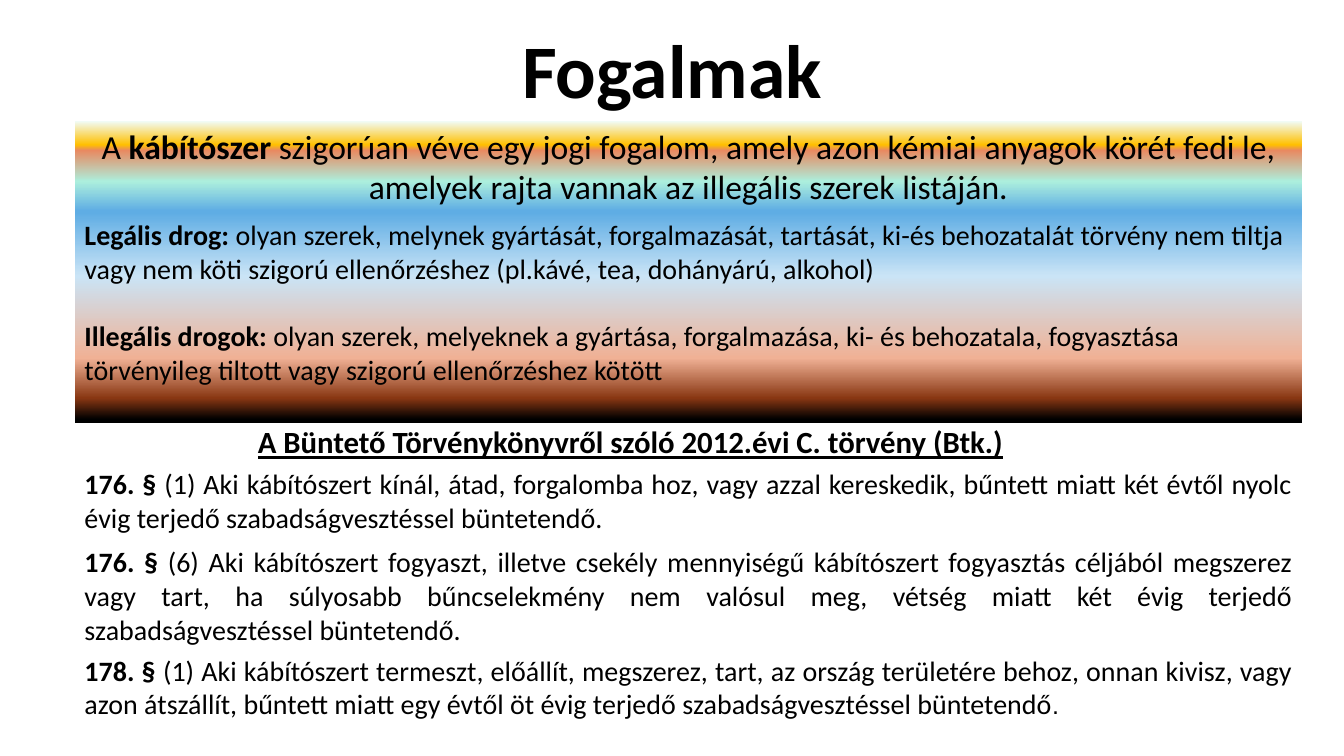
import pptx
import pptx.dml.color
import pptx.enum.shapes
import pptx.enum.text
import pptx.oxml.ns
import pptx.util
from lxml import etree

Cm = pptx.util.Cm
Pt = pptx.util.Pt
RGBColor = pptx.dml.color.RGBColor
Align = pptx.enum.text.PP_ALIGN
Anchor = pptx.enum.text.MSO_ANCHOR
qn = pptx.oxml.ns.qn

BLACK = RGBColor(0, 0, 0)
MINT_WHITE = RGBColor(0xF1, 0xFC, 0xF9)
GOLD = RGBColor(0xFF, 0xC0, 0x00)
CORAL = RGBColor(0xE9, 0x89, 0x60)
MINT = RGBColor(0xAC, 0xEF, 0xDD)
BLUE = RGBColor(0x5F, 0xAD, 0xE4)
PALE_BLUE = RGBColor(0xCA, 0xE4, 0xF6)
PEACH = RGBColor(0xF0, 0xB1, 0x95)
BROWN = RGBColor(0x89, 0x37, 0x13)

LEFT, WIDTH = Cm(1.88), Cm(30.94)

DEFINITION = [
    ("A ", False),
    ("kábítószer ", True),
    ("szigorúan véve egy jogi fogalom, amely azon kémiai anyagok körét fedi le, "
     "amelyek rajta vannak az illegális szerek listáján.", False),
]
DRUG_KINDS = [
    [("Legális drog: ", True),
     ("olyan szerek, melynek gyártását, forgalmazását, tartását, ki-és behozatalát törvény "
      "nem tiltja vagy nem köti szigorú ellenőrzéshez (pl.kávé, tea, dohányárú, alkohol)", False)],
    [("Illegális drogok: ", True),
     ("olyan szerek, melyeknek a gyártása, forgalmazása, ki- és behozatala, fogyasztása "
      "törvényileg tiltott vagy szigorú ellenőrzéshez kötött", False)],
]
SECTIONS = [
    (Cm(11.63), Cm(1.96), "176. §",
     " (1) Aki kábítószert kínál, átad, forgalomba hoz, vagy azzal kereskedik, bűntett miatt "
     "két évtől nyolc évig terjedő szabadságvesztéssel büntetendő."),
    (Cm(13.59), Cm(2.82), "176. § ",
     "(6) Aki kábítószert fogyaszt, illetve csekély mennyiségű kábítószert fogyasztás céljából "
     "megszerez vagy tart, ha súlyosabb bűncselekmény nem valósul meg, vétség miatt két évig "
     "terjedő szabadságvesztéssel büntetendő."),
    (Cm(16.33), Cm(1.96), "178. §",
     " (1) Aki kábítószert termeszt, előállít, megszerez, tart, az ország területére behoz, "
     "onnan kivisz, vagy azon átszállít, bűntett miatt egy évtől öt évig terjedő "
     "szabadságvesztéssel büntetendő"),
]


class ConceptSlide:
    font = "Calibri"

    def __init__(self, slide):
        self.slide = slide

    def style(self, run, size, bold):
        run.font.name = self.font
        run.font.size = Pt(size)
        run.font.bold = bold
        run.font.color.rgb = BLACK

    def fill_text(self, frame, paragraphs, size, align, gap=0):
        frame.word_wrap = True
        for index, pieces in enumerate(paragraphs):
            paragraph = frame.add_paragraph() if index else frame.paragraphs[0]
            paragraph.alignment = align
            paragraph.space_before = Pt(gap if index else 0)
            for words, bold in pieces:
                run = paragraph.add_run()
                run.text = words
                self.style(run, size, bold)

    def title(self, words):
        heading = self.slide.shapes.title
        heading.left, heading.top = Cm(2.33), Cm(0)
        heading.width, heading.height = Cm(29.21), Cm(3.73)
        heading.text_frame.vertical_anchor = Anchor.MIDDLE
        self.fill_text(heading.text_frame, [[(words, True)]], 54, Align.CENTER)
        heading.text_frame.paragraphs[0].line_spacing = 0.9

    def band(self, top, height, stops, paragraphs, size, align, gap=0):
        band = self.slide.shapes.add_shape(
            pptx.enum.shapes.MSO_SHAPE.RECTANGLE, LEFT, top, WIDTH, height)
        band.shadow.inherit = False
        band.line.fill.background()
        band.fill.gradient()
        band.fill.gradient_angle = 270
        stop_list = band.element.spPr.find(".//" + qn("a:gsLst"))
        for stop in list(stop_list):
            stop_list.remove(stop)
        for percent, color in stops:
            stop = etree.SubElement(stop_list, qn("a:gs"), pos=str(percent * 1000))
            etree.SubElement(stop, qn("a:srgbClr"), val=str(color))
        band.text_frame.vertical_anchor = Anchor.TOP
        self.fill_text(band.text_frame, paragraphs, size, align, gap)

    def text(self, left, top, width, height, pieces, size, align, anchor=Anchor.TOP):
        box = self.slide.shapes.add_textbox(left, top, width, height)
        box.text_frame.vertical_anchor = anchor
        self.fill_text(box.text_frame, [pieces], size, align)
        return box.text_frame.paragraphs[0]


def main():
    deck = pptx.Presentation()
    deck.slide_width, deck.slide_height = Cm(33.87), Cm(19.05)
    concepts = ConceptSlide(deck.slides.add_slide(deck.slide_layouts[5]))

    concepts.band(Cm(5.36), Cm(5.31),
                  [(0, BLUE), (30, PALE_BLUE), (69, PEACH), (88, BROWN), (98, BLACK)],
                  DRUG_KINDS, 20, Align.LEFT, gap=24)
    concepts.title("Fogalmak")
    concepts.band(Cm(3.05), Cm(2.31),
                  [(0, MINT_WHITE), (26, GOLD), (32, CORAL), (66, MINT), (98, BLUE)],
                  [DEFINITION], 24, Align.CENTER)

    law = concepts.text(Cm(6.25), Cm(10.54), Cm(19.51), Cm(1.19),
                        [("A Büntető Törvénykönyvről szóló 2012.évi C. törvény (Btk.)", True)],
                        22, Align.LEFT)
    law.runs[0].font.underline = True

    for top, height, number, rule in SECTIONS:
        section = concepts.text(LEFT, top, WIDTH, height, [(number, True), (rule, False)],
                                20, Align.JUSTIFY, Anchor.MIDDLE)
    full_stop = section.add_run()
    full_stop.text = "."
    concepts.style(full_stop, 18, False)
    full_stop.font.name = "Arial"

    deck.save("out.pptx")


if __name__ == "__main__":
    main()
